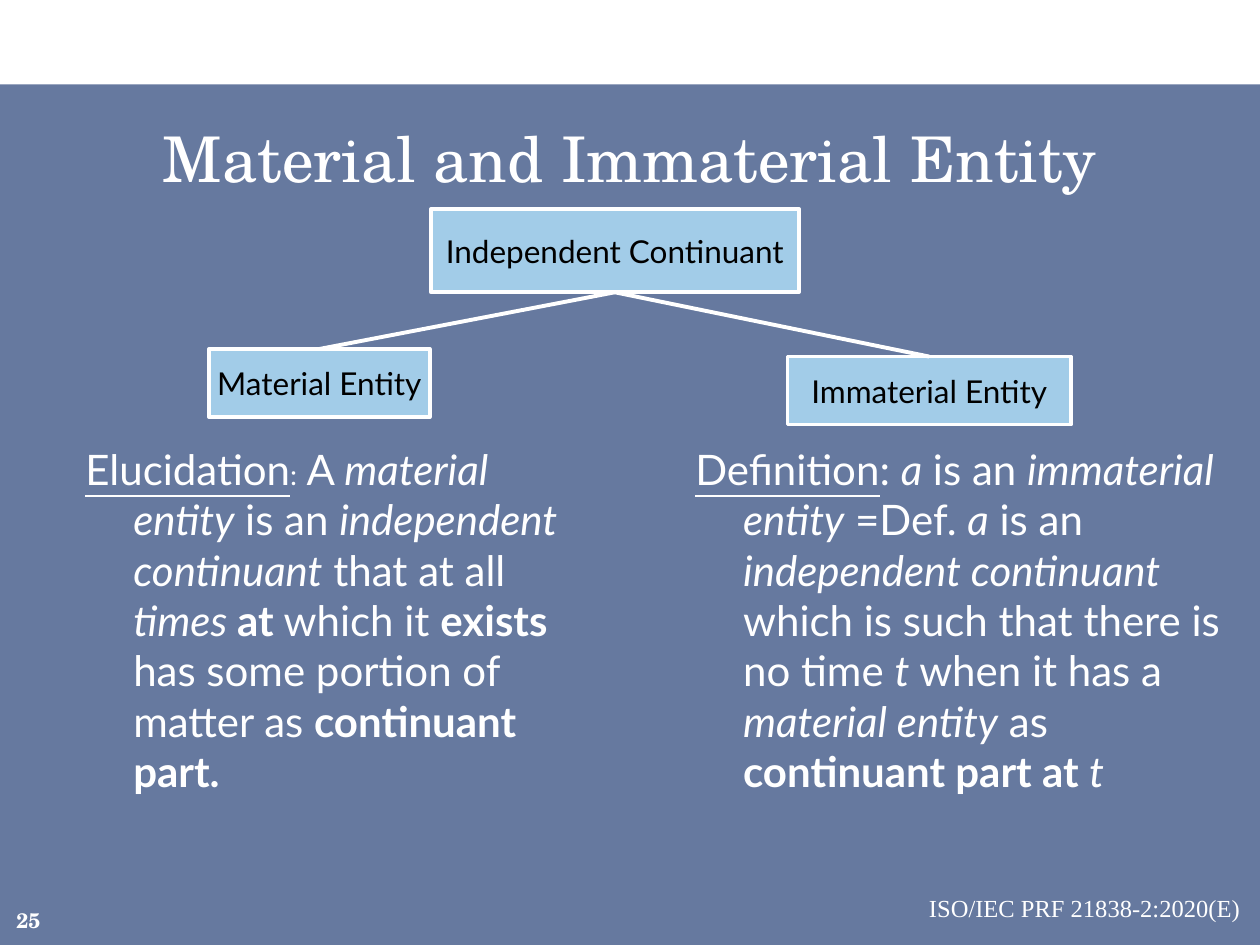
from pptx import Presentation
from pptx.dml.color import RGBColor
from pptx.enum.shapes import MSO_CONNECTOR, MSO_SHAPE
from pptx.enum.text import MSO_ANCHOR, PP_ALIGN
from pptx.oxml.ns import qn
from pptx.util import Inches, Pt
from lxml.etree import SubElement

WHITE, BLACK, NAVY, SKY = "FFFFFF", "000000", "002060", "A2CCE8"
SERIF, SANS, FOOTER_FONT = "TeX Gyre Schola", "Lato", "Times New Roman"

TITLE = "Material and Immaterial Entity"
PAGE_NUMBER = "25"
FOOTER = "ISO/IEC PRF 21838-2:2020(E) "
PARENT = ("Independent Continuant", 3.42, 1.66, 2.92, 0.66)
CHILDREN = [
    ("Material Entity", 1.66, 2.77, 1.75, 0.54),
    ("Immaterial Entity", 6.25, 2.83, 2.25, 0.54),
]
STATEMENTS = [
    (0.58, 4.17, [
        ("Elucidation", "underline"), (":", "small"), (" A ", ""),
        ("material entity", "italic"), (" is an ", ""),
        ("independent continuant", "italic"), (" that at all ", ""),
        ("times ", "italic"), ("at", "bold"), (" which it ", ""),
        ("exists", "bold"), (" has some portion of matter as ", ""),
        ("continuant part.", "bold"),
    ]),
    (5.42, 4.5, [
        ("Definition", "underline"), (": ", ""), ("a", "italic"),
        (" is an ", ""), ("immaterial entity", "italic"), (" =Def. ", ""),
        ("a", "italic"), (" is an ", ""),
        ("independent continuant", "italic"),
        (" which is such that there is no time ", ""), ("t", "italic"),
        (" when it has a ", ""), ("material entity", "italic"), (" as ", ""),
        ("continuant part at ", "bold"), ("t", "italic"),
    ]),
]


def color(value):
    return RGBColor.from_string(value)


def style(paragraph, size, name, shade=WHITE, align=PP_ALIGN.LEFT, bold=False):
    paragraph.alignment = align
    font = paragraph.font
    font.size, font.name, font.bold = Pt(size), name, bold
    font.color.rgb = color(shade)


def add_text(page, area, text, size, name, align, anchor=MSO_ANCHOR.TOP, bold=False):
    frame = page.shapes.add_textbox(*map(Inches, area)).text_frame
    frame.word_wrap = True
    frame.vertical_anchor = anchor
    paragraph = frame.paragraphs[0]
    paragraph.text = text
    style(paragraph, size, name, align=align, bold=bold)
    return paragraph


def add_rectangle(page, area, fill):
    box = page.shapes.add_shape(MSO_SHAPE.RECTANGLE, *map(Inches, area))
    box.shadow.inherit = False
    box.fill.solid()
    box.fill.fore_color.rgb = color(fill)
    return box


def add_background(page):
    panel = add_rectangle(page, (0, 0.67, 10, 6.83), NAVY)
    panel.line.fill.background()
    shade = panel._element.spPr.find(qn("a:solidFill")).find(qn("a:srgbClr"))
    SubElement(shade, qn("a:alpha"), val="60000")


def add_node(page, text, *area):
    box = add_rectangle(page, area, SKY)
    box.line.color.rgb = color(WHITE)
    box.line.width = Pt(2.25)
    frame = box.text_frame
    frame.word_wrap = False
    frame.vertical_anchor = MSO_ANCHOR.MIDDLE
    paragraph = frame.paragraphs[0]
    paragraph.text = text
    style(paragraph, 18, SANS, BLACK, PP_ALIGN.CENTER)
    return box


def add_branch(page, parent, child):
    branch = page.shapes.add_connector(MSO_CONNECTOR.STRAIGHT, 0, 0, 0, 0)
    branch.begin_connect(parent, 2)
    branch.end_connect(child, 0)
    branch.line.color.rgb = color(WHITE)
    branch.line.width = Pt(2.25)
    SubElement(branch._element.spPr, qn("a:effectLst"))


def add_statement(page, left, width, spans):
    paragraph = add_text(page, (left, 3.47, width, 3.83), "", 24, SANS, PP_ALIGN.LEFT)
    properties = paragraph._p.get_or_add_pPr()
    properties.set("marL", str(Inches(0.38)))
    properties.set("indent", str(-Inches(0.38)))
    for text, emphasis in spans:
        span = paragraph.add_run()
        span.text = text
        if emphasis == "small":
            span.font.size = Pt(16)
        elif emphasis:
            setattr(span.font, emphasis, True)


def main():
    deck = Presentation()
    deck.slide_width, deck.slide_height = Inches(10), Inches(7.5)
    page = deck.slides.add_slide(deck.slide_layouts[6])
    add_background(page)
    add_text(page, (0.25, 0.83, 9.5, 0.83), TITLE, 36, SERIF,
             PP_ALIGN.CENTER, MSO_ANCHOR.MIDDLE)
    add_text(page, (-0.08, 7.1, 0.5, 0.4), PAGE_NUMBER, 12, SERIF,
             PP_ALIGN.RIGHT, MSO_ANCHOR.MIDDLE, bold=True)
    parent = add_node(page, *PARENT)
    children = [add_node(page, *child) for child in CHILDREN]
    for child in children:
        add_branch(page, parent, child)
    for statement in STATEMENTS:
        add_statement(page, *statement)
    add_text(page, (7.25, 7.04, 2.74, 0.34), FOOTER, 14, FOOTER_FONT, PP_ALIGN.RIGHT)
    deck.save("out.pptx")


if __name__ == "__main__":
    main()
